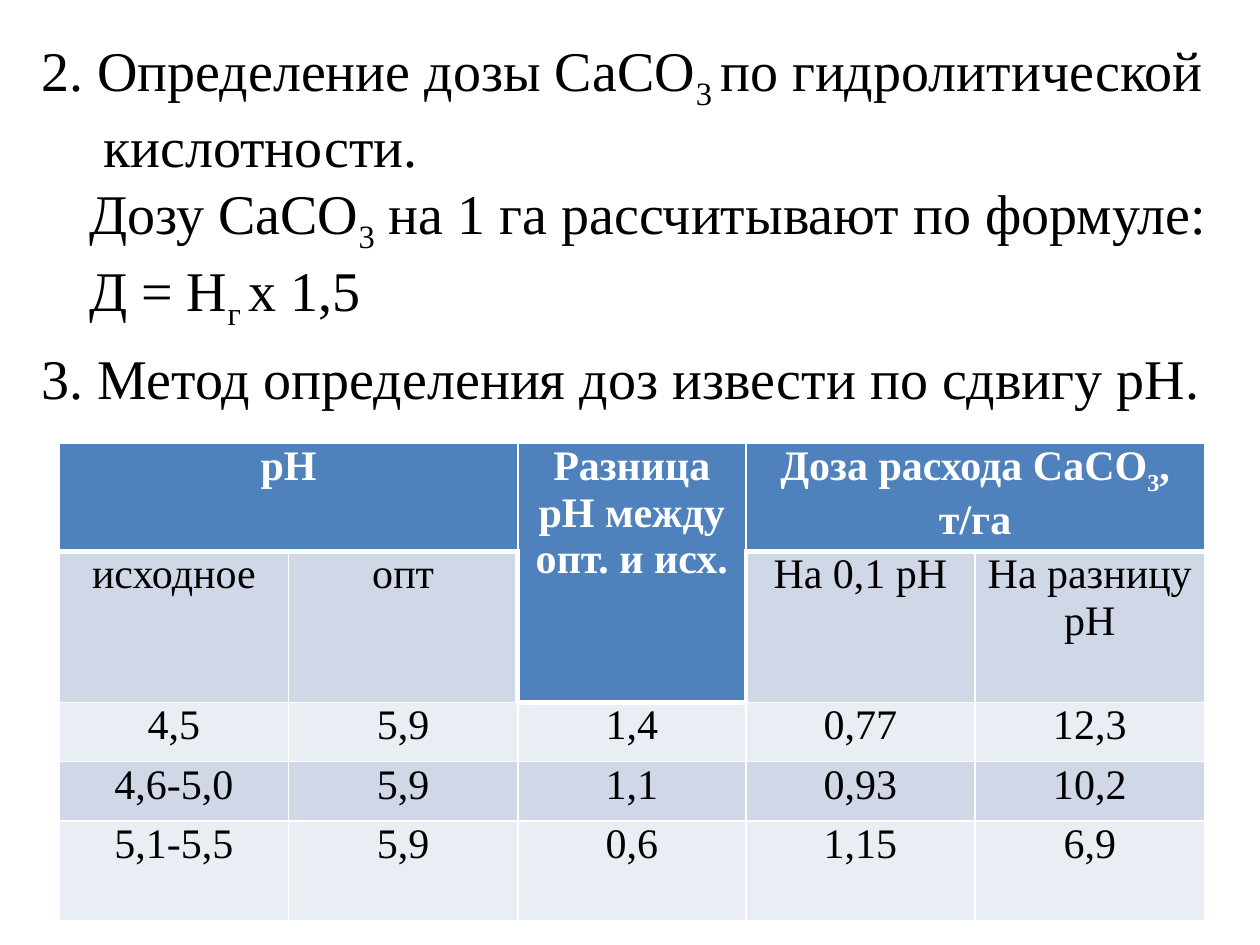
from lxml.etree import SubElement
from pptx import Presentation
from pptx.dml.color import RGBColor
from pptx.enum.text import PP_ALIGN
from pptx.oxml.ns import qn
from pptx.util import Inches, Pt

BLACK, WHITE = "000000", "FFFFFF"
BLUE, DARK, LIGHT = "4F81BD", "D0D8E8", "E9EDF4"
BODY = [
    "2. Определение дозы CaCO|3 |по гидролитической\n кислотности.\n"
    "Дозу CaCO|3| на 1 га рассчитывают по формуле:\nД = H|г |х 1,5",
    "3. Метод определения доз извести по сдвигу pH.",
]
WIDTHS = [1.82, 1.82, 1.81, 1.82, 1.82]
HEIGHTS = [0.83, 0.89, 0.47, 0.47, 0.79]
FILLS = [BLUE, DARK, LIGHT, DARK, LIGHT]
ROWS = [
    ["pH", "", "Разница pH между опт. и исх.", "Доза расхода CaCO|3|, т/га", ""],
    ["исходное", "опт", "", "На 0,1 pH", "На разницу pH"],
    ["4,5", "5,9", "1,4", "0,77", "12,3"],
    ["4,6-5,0", "5,9", "1,1", "0,93", "10,2"],
    ["5,1-5,5", "5,9", "0,6", "1,15", "6,9"],
]
MERGES = [((0, 0), (0, 1)), ((0, 2), (1, 2)), ((0, 3), (0, 4))]


def color(code):
    return RGBColor.from_string(code)


def write(para, text, size, code, bold=False):
    font = para.font
    font.name, font.size, font.bold = "Times New Roman", Pt(size), bold
    font.color.rgb = color(code)
    for i, part in enumerate(text.split("|")):
        for j, line in enumerate(part.split("\n")):
            if j:
                para.add_line_break()
            run = para.add_run()
            run.text = line
            if i % 2:
                run._r.get_or_add_rPr().set("baseline", "-25000")


def add_body(slide):
    box = slide.shapes.add_textbox(
        Inches(0.23), Inches(0.23), Inches(9.53), Inches(6.88))
    frame = box.text_frame
    frame.word_wrap = True
    for i, text in enumerate(BODY):
        para = frame.add_paragraph() if i else frame.paragraphs[0]
        para.space_before = Pt(6.4)
        props = para._p.get_or_add_pPr()
        props.set("marL", str(Inches(0.38)))
        props.set("indent", str(Inches(-0.38)))
        write(para, text, 32, BLACK)


def thick_sides(row, col):
    if col == 2:
        return {0: "B", 1: "LRB", 2: "T"}.get(row, "")
    if row == 1:
        return {1: "TR", 3: "TL"}.get(col, "T")
    return "B" if row == 0 else ""


def set_lines(cell, thick):
    props = cell._tc.get_or_add_tcPr()
    for i, side in enumerate("LRTB"):
        line = SubElement(props, qn(f"a:ln{side}"))
        line.set("w", str(Pt(3 if side in thick else 1)))
        fill = SubElement(line, qn("a:solidFill"))
        SubElement(fill, qn("a:srgbClr")).set("val", WHITE)
        props.insert(i, line)


def style_cell(cell, text, row, col):
    head = row == 0 or (row, col) == (1, 2)
    cell.margin_left = cell.margin_right = Inches(0.07)
    cell.margin_top = cell.margin_bottom = 0
    cell.fill.solid()
    cell.fill.fore_color.rgb = color(BLUE if head else FILLS[row])
    para = cell.text_frame.paragraphs[0]
    para.alignment = PP_ALIGN.CENTER
    if text:
        write(para, text, 24, WHITE if head else BLACK, head)
    set_lines(cell, thick_sides(row, col))


def add_doses(slide):
    table = slide.shapes.add_table(
        len(ROWS), len(WIDTHS), Inches(0.47), Inches(3.52),
        Inches(sum(WIDTHS)), Inches(sum(HEIGHTS))).table
    for col, width in zip(table.columns, WIDTHS):
        col.width = Inches(width)
    for row, height in zip(table.rows, HEIGHTS):
        row.height = Inches(height)
    for start, end in MERGES:
        table.cell(*start).merge(table.cell(*end))
    for r, texts in enumerate(ROWS):
        for c, text in enumerate(texts):
            style_cell(table.cell(r, c), text, r, c)


def main():
    deck = Presentation()
    deck.slide_width, deck.slide_height = Inches(10), Inches(7.5)
    slide = deck.slides.add_slide(deck.slide_layouts[6])
    add_body(slide)
    add_doses(slide)
    deck.save("out.pptx")


if __name__ == "__main__":
    main()
